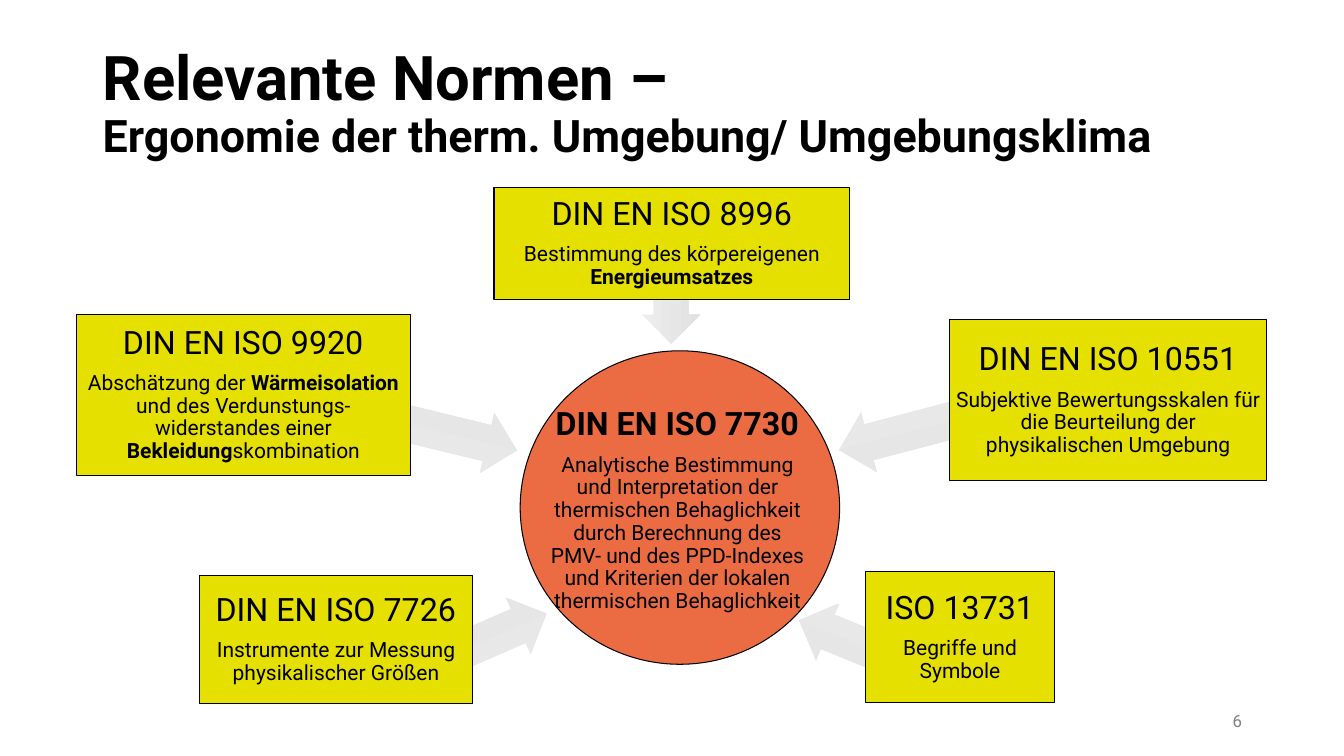
from pptx import Presentation
from pptx.dml.color import RGBColor
from pptx.enum.shapes import MSO_SHAPE
from pptx.enum.text import MSO_ANCHOR, PP_ALIGN
from pptx.util import Cm, Pt

BLACK = RGBColor(0x00, 0x00, 0x00)
GREY = RGBColor(0x80, 0x80, 0x80)
YELLOW = RGBColor(0xE6, 0xE0, 0x00)
ORANGE = RGBColor(0xEB, 0x6C, 0x43)
ARROW_LIGHT = RGBColor(0xED, 0xED, 0xED)
ARROW_DARK = RGBColor(0xE1, 0xE1, 0xE1)

HEADING = {"size": Pt(23)}
BODY = {"size": Pt(15)}
BOX_FRAME = {
    "word_wrap": True,
    "vertical_anchor": MSO_ANCHOR.MIDDLE,
    "margin_left": Cm(0.1),
    "margin_right": Cm(0.1),
    "margin_top": Cm(0.1),
    "margin_bottom": Cm(0.1),
}

STANDARDS = [
    ("ISO 13731", [("Begriffe und Symbole", False)],
     (21.82, 14.4, 4.75, 3.3), (19.99, 15.62, 4.06, 1.55), 22.2),
    ("DIN EN ISO 9920",
     [("Abschätzung der ", False), ("Wärmeisolation", True),
      (" und des Verdunstungs-widerstandes einer ", False),
      ("Bekleidung", True), ("skombination", False)],
     (1.93, 7.92, 8.41, 4.06), (5.99, 9.73, 7.14, 1.55), 193.7),
    ("DIN EN ISO 7726",
     [("Instrumente zur Messung physikalischer Größen", False)],
     (5.03, 14.5, 6.88, 3.23), (9.93, 15.49, 4.01, 1.55), 156.4),
    ("DIN EN ISO 8996",
     [("Bestimmung des körpereigenen ", False), ("Energieumsatzes", True)],
     (12.45, 4.72, 8.97, 2.82), (15.77, 6.78, 2.29, 1.47), 270),
    ("DIN EN ISO 10551",
     [("Subjektive Bewertungsskalen für die Beurteilung der "
       "physikalischen Umgebung", False)],
     (23.93, 8.05, 8.0, 4.06), (21.03, 9.65, 7.21, 1.55), 345.3),
]


def apply_format(target, values):
    for attribute, value in values.items():
        setattr(target, attribute, value)


def add_run(paragraph, text, color=BLACK, **font_format):
    run = paragraph.add_run()
    run.text = text
    apply_format(run.font, {"name": "Roboto", **font_format})
    run.font.color.rgb = color


def add_text_area(slide, place, **frame_format):
    frame = slide.shapes.add_textbox(*map(Cm, place)).text_frame
    apply_format(frame, {"word_wrap": True, **frame_format})
    return frame


def add_outlined_shape(slide, kind, place, color):
    shape = slide.shapes.add_shape(kind, *map(Cm, place))
    shape.shadow.inherit = False
    shape.fill.solid()
    shape.fill.fore_color.rgb = color
    shape.line.color.rgb = BLACK
    shape.line.width = Pt(0.75)
    return shape


def add_arrow(slide, place, rotation):
    arrow = slide.shapes.add_shape(MSO_SHAPE.LEFT_ARROW, *map(Cm, place))
    arrow.shadow.inherit = False
    arrow.rotation = rotation
    arrow.adjustments[0] = 0.6
    arrow.adjustments[1] = 0.5
    arrow.line.fill.background()
    arrow.fill.gradient()
    arrow.fill.gradient_angle = 270
    for stop, color in zip(arrow.fill.gradient_stops, (ARROW_LIGHT, ARROW_DARK)):
        stop.color.rgb = color


def write_standard(frame, number, description, bold_number=False):
    heading, body = frame.paragraphs[0], frame.add_paragraph()
    for paragraph, space in ((heading, 8), (body, 5)):
        apply_format(paragraph, {
            "alignment": PP_ALIGN.CENTER,
            "line_spacing": 0.9,
            "space_after": Pt(space),
        })
    add_run(heading, number, bold=bold_number, **HEADING)
    for text, bold in description:
        add_run(body, text, bold=bold, **BODY)


def add_title(slide):
    title = add_text_area(slide, (2.34, 1.07, 29.21, 3.68)).paragraphs[0]
    title.line_spacing = 0.9
    add_run(title, "Relevante Normen –", size=Pt(44), bold=True)
    title.add_line_break()
    add_run(title, "Ergonomie der therm. Umgebung/ Umgebungsklima",
            size=Pt(32), bold=True)


def add_page_number(slide):
    frame = add_text_area(slide, (23.93, 17.65, 7.62, 1.02),
                          vertical_anchor=MSO_ANCHOR.MIDDLE)
    frame.paragraphs[0].alignment = PP_ALIGN.RIGHT
    add_run(frame.paragraphs[0], "6", GREY, size=Pt(12))


def add_standard_box(slide, number, description, place):
    box = add_outlined_shape(slide, MSO_SHAPE.RECTANGLE, place, YELLOW)
    apply_format(box.text_frame, BOX_FRAME)
    write_standard(box.text_frame, number, description)


def add_central_standard(slide):
    add_outlined_shape(slide, MSO_SHAPE.OVAL, (13.11, 8.84, 8.05, 7.9), ORANGE)
    frame = add_text_area(slide, (13.61, 10.16, 6.93, 5.33))
    write_standard(
        frame, "DIN EN ISO 7730",
        [("Analytische Bestimmung und Interpretation der thermischen "
          "Behaglichkeit durch Berechnung des PMV- und des PPD-Indexes und "
          "Kriterien der lokalen thermischen Behaglichkeit", False)],
        bold_number=True)


def main():
    presentation = Presentation()
    presentation.slide_width = Cm(33.87)
    presentation.slide_height = Cm(19.05)
    slide = presentation.slides.add_slide(presentation.slide_layouts[6])
    add_title(slide)
    add_page_number(slide)
    add_central_standard(slide)
    for number, description, box_place, arrow_place, rotation in STANDARDS:
        add_arrow(slide, arrow_place, rotation)
        add_standard_box(slide, number, description, box_place)
    presentation.save("out.pptx")


if __name__ == "__main__":
    main()
